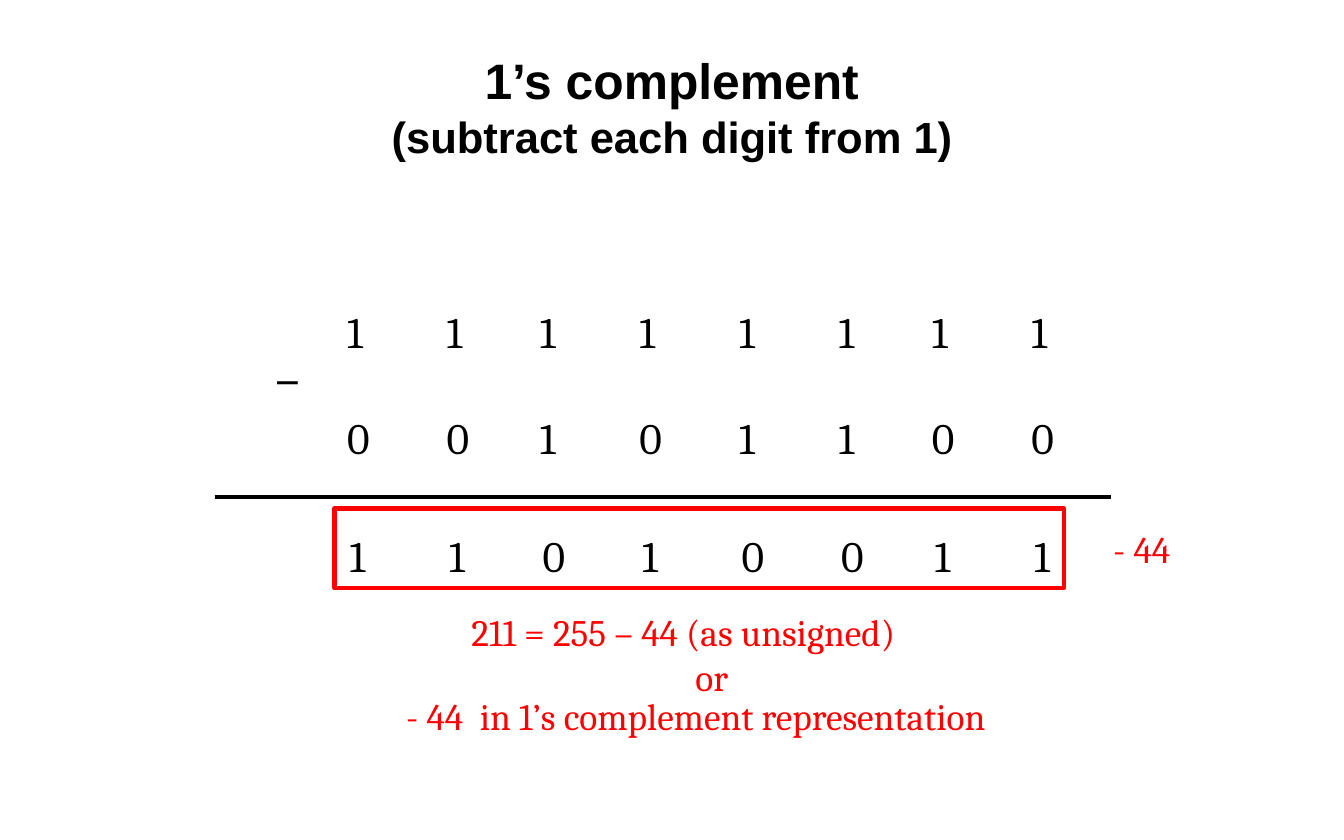
from pptx import Presentation
from pptx.dml.color import RGBColor
from pptx.enum.shapes import MSO_CONNECTOR, MSO_SHAPE
from pptx.enum.text import MSO_ANCHOR, MSO_AUTO_SIZE, PP_ALIGN
from pptx.oxml.ns import qn
from pptx.util import Pt
from lxml import etree

BLACK = RGBColor(0, 0, 0)
RED = RGBColor(255, 0, 0)
CENTER = PP_ALIGN.CENTER
LEFT = PP_ALIGN.LEFT
TOP = MSO_ANCHOR.TOP
GROW = MSO_AUTO_SIZE.SHAPE_TO_FIT_TEXT
FIXED = MSO_AUTO_SIZE.NONE
RECT = MSO_SHAPE.RECTANGLE
STRAIGHT = MSO_CONNECTOR.STRAIGHT


class Board:
    """Holds the style and the current slide."""
    head_font = "Arial"
    body_font = "Cambria"

    def __init__(self, slide):
        self.slide = slide

    def box(self, x, y, w, h, wrap=False):
        shape = self.slide.shapes.add_textbox(Pt(x), Pt(y), Pt(w), Pt(h))
        frame = shape.text_frame
        frame.word_wrap = wrap
        frame.auto_size = FIXED if wrap else GROW
        frame.vertical_anchor = TOP
        return frame

    def add_text(self, para, text, size, color, font, bold=False, align=LEFT):
        para.alignment = align
        run = para.add_run()
        run.text = text
        run.font.name = font
        run.font.size = Pt(size)
        run.font.bold = bold
        run.font.color.rgb = color

    def title(self, x, y, w, h, lines):
        frame = self.box(x, y, w, h, wrap=True)
        frame.margin_top = Pt(8)
        for i, (text, size) in enumerate(lines):
            para = frame.add_paragraph() if i else frame.paragraphs[0]
            self.add_text(para, text, size, BLACK, self.head_font, True, CENTER)

    def label(self, x, y, w, h, lines, size, color):
        """Each line is a text and its left indent."""
        frame = self.box(x, y, w, h)
        for i, (text, indent) in enumerate(lines):
            para = frame.add_paragraph() if i else frame.paragraphs[0]
            self.add_text(para, text, size, color, self.body_font)
            if indent:
                para._p.get_or_add_pPr().set("marL", str(Pt(indent)))

    def digits(self, lefts, y, bits):
        for x, bit in zip(lefts, bits):
            self.label(x, y, 29, 41, [(bit, 0)], 28, BLACK)

    def rule(self, x1, x2, y, width):
        line = self.slide.shapes.add_connector(
            STRAIGHT, Pt(x1), Pt(y), Pt(x2), Pt(y))
        line.line.color.rgb = BLACK
        line.line.width = Pt(width)
        etree.SubElement(line._element.spPr, qn("a:effectLst"))

    def frame(self, x, y, w, h, width):
        shape = self.slide.shapes.add_shape(RECT, Pt(x), Pt(y), Pt(w), Pt(h))
        shape.shadow.inherit = False
        shape.fill.background()
        shape.line.color.rgb = RED
        shape.line.width = Pt(width)


def main():
    deck = Presentation()
    deck.slide_width, deck.slide_height = Pt(864), Pt(540)
    board = Board(deck.slides.add_slide(deck.slide_layouts[6]))

    # Heading
    board.title(72, 24, 720, 90, [("1’s complement", 32),
                                  ("(subtract each digit from 1)", 28)])

    # Subtraction: the columns step by 64, or 60 before the third and seventh
    lefts = [216]
    for step in (64, 60, 64, 64, 64, 60, 64):
        lefts.append(lefts[-1] + step)
    board.digits(lefts, 192.6, "11111111")
    board.digits(lefts, 260.4, "00101100")
    board.label(171, 204, 32.4, 51, [("_", 0)], 36, BLACK)
    board.rule(138, 714, 319.5, 2)

    # Result
    board.digits([x + 1.7 for x in lefts], 336.6, "11010011")
    board.frame(215, 327, 469, 51, 3)
    board.label(708.5, 335, 53, 36.5, [("- 44", 0)], 24, RED)

    # Meaning of the result
    board.label(296, 388, 297, 65.5, [("211 = 255 – 44 (as unsigned)", 0),
                                      ("or", 144)], 24, RED)
    board.label(254, 442, 387, 36,
                [("- 44  in 1’s complement representation", 0)], 24, RED)

    deck.save("out.pptx")


if __name__ == "__main__":
    main()
